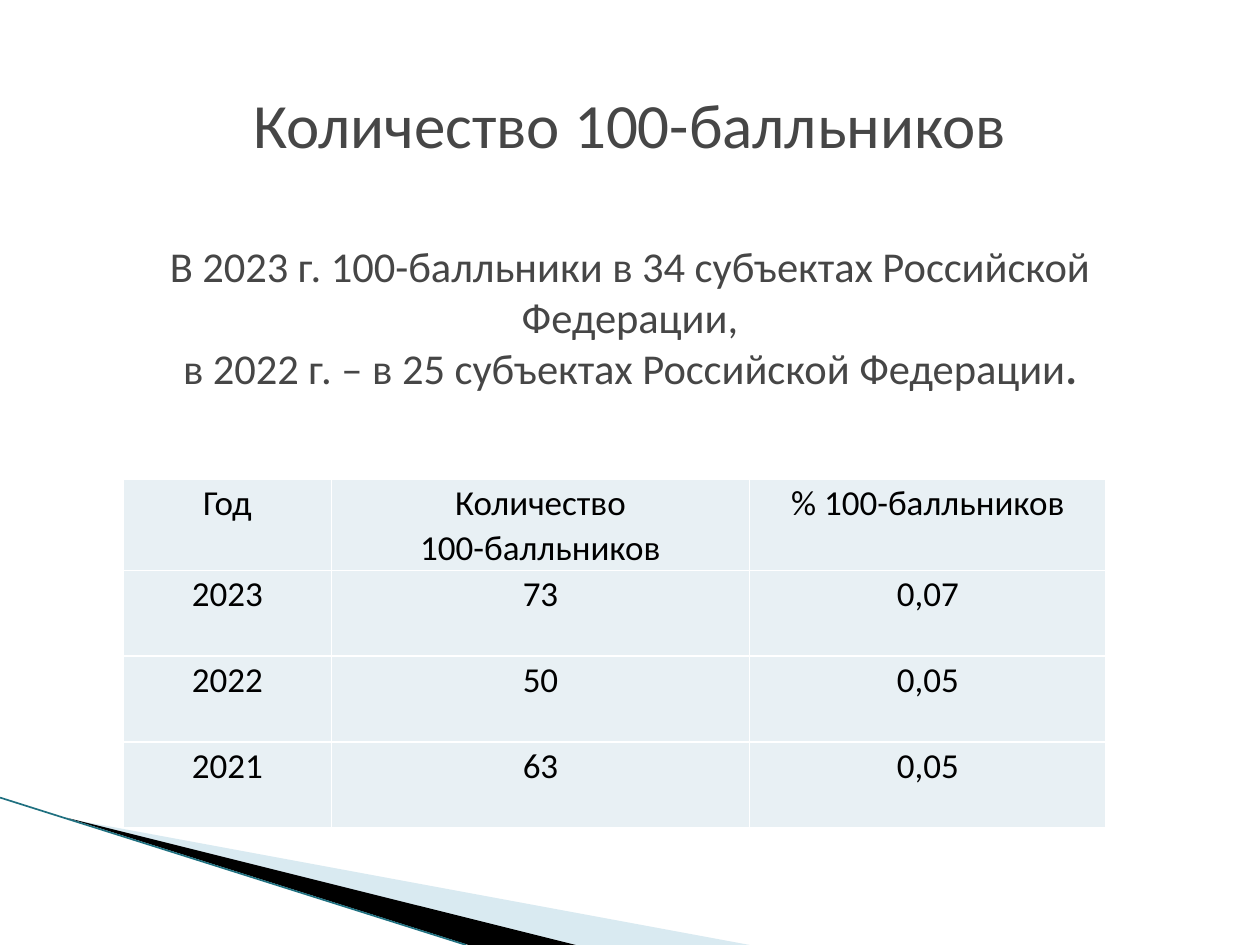
"""Build a slide with a heading, a summary and a table of top scorers by year."""
from lxml.etree import SubElement
from pptx import Presentation
from pptx.dml.color import RGBColor
from pptx.enum.text import MSO_ANCHOR, MSO_AUTO_SIZE, PP_ALIGN
from pptx.oxml.ns import qn
from pptx.util import Inches, Pt

GRAY = RGBColor(0x46, 0x46, 0x46)
BLACK = RGBColor(0, 0, 0)
PALE = RGBColor(0xE8, 0xF0, 0xF4)
SKY = RGBColor(0xA0, 0xCB, 0xDC)
TEAL = RGBColor(0x1F, 0x70, 0x80)
UNIT = Inches(0.01)


def style(para, **form):
    """Centre a paragraph and apply font values to its runs."""
    para.alignment = PP_ALIGN.CENTER
    for run in para.runs:
        run.font.name = "Calibri"
        run.font.color.rgb = form.get("color", GRAY)
        for key in ("size", "bold"):
            setattr(run.font, key, form.get(key))


deck = Presentation()
deck.slide_width, deck.slide_height = Inches(10), Inches(7.5)
slide = deck.slides.add_slide(deck.slide_layouts[1])
shapes = slide.shapes

wedges = [
    (SKY, [(55, 650), (595, 750), (456, 750)]),
    (BLACK, [(53, 649), (457, 750), (372, 750)]),
]
for color, (start, *rest) in wedges:
    pen = shapes.build_freeform(*start, scale=UNIT)
    pen.add_line_segments(rest)
    wedge = pen.convert_to_shape()
    wedge.shadow.inherit = False
    wedge.fill.solid()
    wedge.fill.fore_color.rgb = color
    wedge.line.fill.background()
    if color == SKY:
        tint = wedge.fill._xPr.find(".//" + qn("a:srgbClr"))
        SubElement(tint, qn("a:alpha"), val="40000")

edge = shapes.add_connector(1, 0, Inches(6.33), Inches(3.7), Inches(7.5))
edge.line.color.rgb = TEAL
edge.line.width = Pt(0.95)
SubElement(edge._element.spPr, qn("a:effectLst"))

title, body = slide.placeholders
title.text_frame.text = "Количество 100-балльников"
body.text_frame.text = (
    "В 2023 г. 100-балльники в 34 субъектах Российской Федерации,\v"
    "в 2022 г. – в 25 субъектах Российской Федерации"
)
dot = body.text_frame.paragraphs[0].add_run()
dot.text = "."
for holder, top, high, size in [(title, 0.05, 0.16, 36), (body, 0.24, 0.19, 24.3)]:
    holder.left, holder.width = Inches(0.5), Inches(9)
    holder.top = int(deck.slide_height * top)
    holder.height = int(deck.slide_height * high)
    frame = holder.text_frame
    frame.auto_size = MSO_AUTO_SIZE.NONE
    frame.vertical_anchor = MSO_ANCHOR.MIDDLE
    para = frame.paragraphs[0]
    para.space_before = Pt(0)
    props = para._p.get_or_add_pPr()
    props.set("marL", "0")
    props.set("indent", "0")
    SubElement(props, qn("a:buNone"))
    style(para, size=Pt(size))
dot.font.bold = True

data = [
    ("Год", "Количество\n100-балльников", "% 100-балльников"),
    ("2023", "73", "0,07"),
    ("2022", "50", "0,05"),
    ("2021", "63", "0,05"),
]
table = shapes.add_table(
    4, 3, Inches(0.98), Inches(3.8), Inches(7.8), Inches(2.73)
).table
table.first_row = table.horz_banding = False
for col, wide in zip(table.columns, (1.65, 3.32, 2.83)):
    col.width = Inches(wide)
inset = {
    "margin_left": Inches(0.02),
    "margin_right": Inches(0.02),
    "margin_top": 0,
    "margin_bottom": 0,
}
for row, texts in zip(table.rows, data):
    row.height = Inches(0.68)
    for cell, text in zip(row.cells, texts):
        cell.text = text
        cell.fill.solid()
        cell.fill.fore_color.rgb = PALE
        for key, value in inset.items():
            setattr(cell, key, value)
        for para in cell.text_frame.paragraphs:
            para.line_spacing = 1.07
            style(para, size=Pt(20), color=BLACK)

deck.save("out.pptx")
